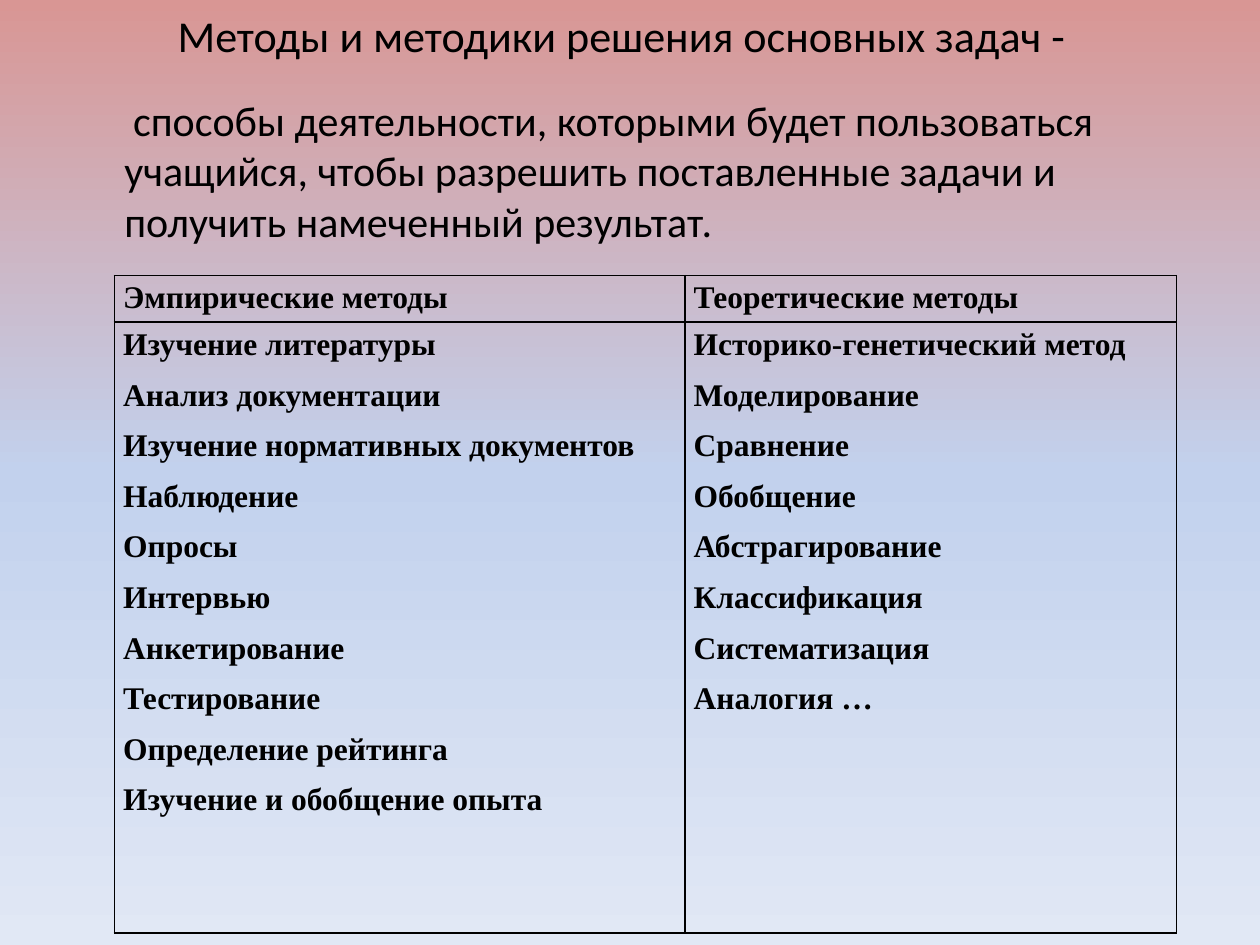
from copy import deepcopy
from dataclasses import dataclass

from lxml.etree import SubElement
from pptx import Presentation
from pptx.dml.color import RGBColor as RGB
from pptx.enum.text import MSO_ANCHOR as Anchor, MSO_AUTO_SIZE as AutoSize, PP_ALIGN as Align
from pptx.oxml.ns import qn
from pptx.util import Pt


@dataclass(frozen=True)
class Theme:
    ink: str = "000000"
    backdrop: tuple = ((0, "D99694"), (0.5, "C2D1ED"), (1, "E1E8F5"))
    heading_font: str = "Calibri"
    table_font: str = "Times New Roman"
    title_size: float = 25.2
    body_size: float = 24
    table_size: float = 18
    border: float = 1


def write(frame, lines, *, font, size, color, bold=False, align=Align.LEFT,
          before=0, after=0, spacing=1.0, first_indent=0):
    """Fill a text frame with one paragraph per line, all in the same format."""
    frame.word_wrap = True
    for index, line in enumerate(lines):
        paragraph = frame.add_paragraph() if index else frame.paragraphs[0]
        paragraph.alignment = align
        paragraph.space_before, paragraph.space_after = Pt(before), Pt(after)
        paragraph.line_spacing = spacing
        if first_indent:
            paragraph._p.get_or_add_pPr().set("indent", str(Pt(first_indent)))
        run = paragraph.add_run()
        run.text = line
        run.font.name, run.font.size, run.font.bold = font, Pt(size), bold
        run.font.color.rgb = RGB.from_string(color)


class SlideBuilder:
    """Adds styled elements to one slide; lengths are in points."""

    def __init__(self, slide, theme):
        self.slide, self.theme = slide, theme

    def background(self):
        fill = self.slide.background.fill
        fill.gradient()
        fill.gradient_angle = 270  # counter-clockwise, so top to bottom
        first_stop = fill._fill._gradFill.gsLst[0]
        first_stop.addnext(deepcopy(first_stop))
        for stop, (position, color) in zip(fill.gradient_stops, self.theme.backdrop):
            stop.position = position
            stop.color.rgb = RGB.from_string(color)

    def title(self, text, left, top, width, height):
        title = self.slide.shapes.title
        title.left, title.top, title.width, title.height = map(Pt, (left, top, width, height))
        title.text_frame.auto_size = AutoSize.NONE
        title.text_frame.vertical_anchor = Anchor.MIDDLE
        write(title.text_frame, [text], font=self.theme.heading_font,
              size=self.theme.title_size, color=self.theme.ink, align=Align.CENTER)

    def paragraph(self, text, left, top, width, height):
        box = self.slide.shapes.add_textbox(*map(Pt, (left, top, width, height)))
        write(box.text_frame, [text], font=self.theme.heading_font, size=self.theme.body_size,
              color=self.theme.ink, before=4.8, first_indent=5)

    def table(self, rows, left, top, widths, heights):
        """Draw a bordered table; each cell is a list of lines."""
        table = self.slide.shapes.add_table(
            len(rows), len(widths), Pt(left), Pt(top), Pt(sum(widths)), Pt(sum(heights))).table
        table.first_row = table.horz_banding = False
        for column, width in zip(table.columns, widths):
            column.width = Pt(width)
        for row, height, contents in zip(table.rows, heights, rows):
            row.height = Pt(height)
            for cell, lines in zip(row.cells, contents):
                self.cell(cell, lines)

    def cell(self, cell, lines):
        cell.margin_left = cell.margin_right = Pt(5)
        cell.margin_top = cell.margin_bottom = 0
        properties = cell._tc.get_or_add_tcPr()
        for side in ("lnL", "lnR", "lnT", "lnB"):
            border = SubElement(properties, qn(f"a:{side}"), w=str(Pt(self.theme.border)))
            SubElement(SubElement(border, qn("a:solidFill")), qn("a:srgbClr"), val=self.theme.ink)
        cell.fill.background()
        write(cell.text_frame, lines, font=self.theme.table_font, size=self.theme.table_size,
              color=self.theme.ink, bold=True, align=Align.JUSTIFY, after=6, spacing=1.15)


EMPIRICAL = ["Изучение литературы", "Анализ документации", "Изучение нормативных документов",
             "Наблюдение", "Опросы", "Интервью", "Анкетирование", "Тестирование",
             "Определение рейтинга", "Изучение и обобщение опыта"]
THEORETICAL = ["Историко-генетический метод", "Моделирование", "Сравнение", "Обобщение",
               "Абстрагирование", "Классификация", "Систематизация", "Аналогия …"]


def main():
    deck = Presentation()
    deck.slide_width, deck.slide_height = Pt(720), Pt(540)
    builder = SlideBuilder(deck.slides.add_slide(deck.slide_layouts[5]), Theme())
    builder.background()
    builder.title("Методы и методики решения основных задач - ", 34, 0, 648, 40)
    builder.paragraph("способы деятельности, которыми будет пользоваться учащийся, "
                      "чтобы разрешить поставленные задачи и получить намеченный результат.",
                      64, 50.4, 621, 100)
    builder.table([[["Эмпирические методы"], ["Теоретические методы"]],
                   [EMPIRICAL, THEORETICAL]],
                  65.4, 157.5, widths=(326, 280.8), heights=(26.6, 349.2))
    deck.save("out.pptx")


if __name__ == "__main__":
    main()
